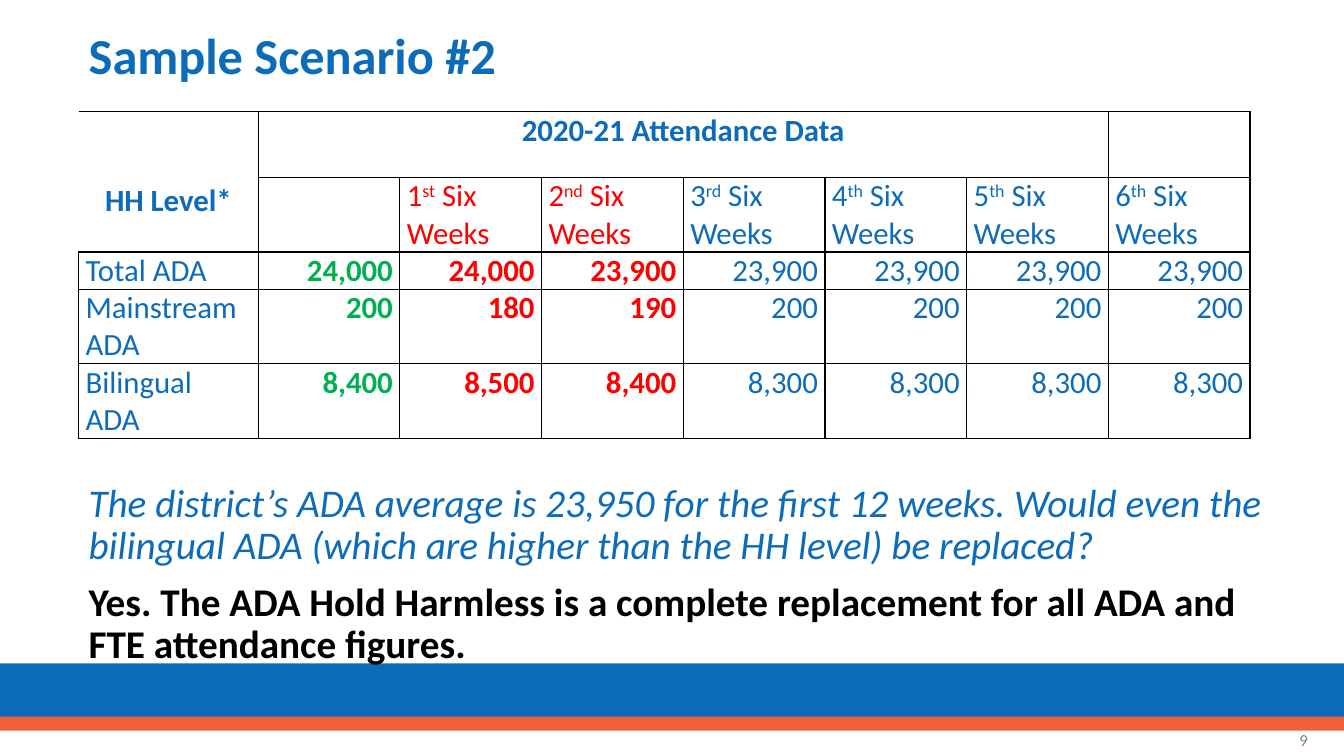
from dataclasses import dataclass

from lxml.etree import SubElement
from pptx import Presentation
from pptx.dml.color import RGBColor
from pptx.enum.shapes import MSO_SHAPE
from pptx.enum.text import MSO_ANCHOR, MSO_AUTO_SIZE, PP_ALIGN
from pptx.oxml.ns import qn
from pptx.util import Inches, Pt

BLUE, ORANGE, RED, GREEN = "0D6CB9", "F16038", "FF0000", "00B050"
BLACK, GREY = "000000", "808080"


@dataclass
class Band:
    top: float
    height: float
    color: str


@dataclass
class AdaRow:
    label: str
    values: list[str]


BANDS = [Band(6.58, 0.58, BLUE), Band(7.11, 0.14, ORANGE)]
ADA_ROWS = [
    AdaRow("Total ADA", ["24,000", "24,000"] + ["23,900"] * 5),
    AdaRow("Mainstream ADA", ["200", "180", "190"] + ["200"] * 4),
    AdaRow("Bilingual ADA", ["8,400", "8,500", "8,400"] + ["8,300"] * 4),
]
VALUE_COLORS = [GREEN, RED, RED] + [BLUE] * 4
ORDINALS = ["st", "nd", "rd", "th", "th", "th"]
ROW_HEIGHTS = [0.65, 0.74, 0.37, 0.74, 0.74]
LABEL_WIDTH, TABLE_WIDTH = 1.78, 11.62


def rgb(color: str) -> RGBColor:
    return RGBColor.from_string(color)


def write(p, text: str, *, size: float = 22, color: str = BLUE, bold: bool = False,
          italic: bool = False, align=PP_ALIGN.LEFT, raised: bool = False) -> None:
    p.alignment = align
    r = p.add_run()
    r.text = text
    r.font.name = "Calibri"
    r.font.size = Pt(size)
    r.font.bold = bold
    r.font.italic = italic
    r.font.color.rgb = rgb(color)
    if raised:
        r.font._element.set("baseline", "30000")


def add_band(s, band: Band) -> None:
    sp = s.shapes.add_shape(MSO_SHAPE.RECTANGLE, 0, Inches(band.top),
                            Inches(13.33), Inches(band.height))
    sp.shadow.inherit = False
    sp.fill.solid()
    sp.fill.fore_color.rgb = rgb(band.color)
    sp.line.fill.background()


def add_text_box(s, left: float, top: float, width: float, height: float):
    sp = s.shapes.add_textbox(Inches(left), Inches(top), Inches(width), Inches(height))
    sp.text_frame.word_wrap = True
    return sp.text_frame


def format_cell(cell, left_border: bool) -> None:
    cell.margin_left = cell.margin_right = Inches(0.07)
    cell.margin_top = cell.margin_bottom = 0
    tc_pr = cell._tc.get_or_add_tcPr()
    for side in "LRTB":
        ln = SubElement(tc_pr, qn(f"a:ln{side}"), w=str(Pt(1)))
        if side == "L" and not left_border:
            SubElement(ln, qn("a:noFill"))
        else:
            fill = SubElement(ln, qn("a:solidFill"))
            SubElement(fill, qn("a:srgbClr"), val=BLACK)
    cell.fill.background()


def add_attendance_table(s) -> None:
    frame = s.shapes.add_table(len(ROW_HEIGHTS), 8, Inches(0.78), Inches(1.11),
                               Inches(TABLE_WIDTH), Inches(sum(ROW_HEIGHTS)))
    table = frame.table
    table.first_row = table.horz_banding = False
    for row, height in zip(table.rows, ROW_HEIGHTS):
        row.height = Inches(height)
    for i, column in enumerate(table.columns):
        column.width = Inches((TABLE_WIDTH - LABEL_WIDTH) / 7 if i else LABEL_WIDTH)
    for i in range(len(ROW_HEIGHTS)):
        for j in range(8):
            format_cell(table.cell(i, j), left_border=j > 0 or i > 1)

    level = table.cell(0, 0)
    level.merge(table.cell(1, 0))
    level.vertical_anchor = MSO_ANCHOR.MIDDLE
    level.margin_top = Inches(0.37)
    write(level.text_frame.paragraphs[0], "HH Level*", bold=True, align=PP_ALIGN.CENTER)
    heading = table.cell(0, 1)
    heading.merge(table.cell(0, 6))
    write(heading.text_frame.paragraphs[0], "2020-21 Attendance Data", bold=True,
          align=PP_ALIGN.CENTER)

    for n, suffix in enumerate(ORDINALS, 1):
        p = table.cell(1, n + 1).text_frame.paragraphs[0]
        color = VALUE_COLORS[n]
        write(p, str(n), color=color)
        write(p, suffix, color=color, raised=True)
        write(p, " Six Weeks", color=color)

    for i, row in enumerate(ADA_ROWS, 2):
        write(table.cell(i, 0).text_frame.paragraphs[0], row.label)
        for j, (value, color) in enumerate(zip(row.values, VALUE_COLORS), 1):
            write(table.cell(i, j).text_frame.paragraphs[0], value, color=color,
                  bold=color != BLUE, align=PP_ALIGN.RIGHT)


def add_title(s) -> None:
    sp = s.shapes.title
    sp.left, sp.top, sp.width, sp.height = map(Inches, (0.78, 0.17, 12.16, 0.82))
    tf = sp.text_frame
    tf.auto_size = MSO_AUTO_SIZE.NONE
    tf.vertical_anchor = MSO_ANCHOR.MIDDLE
    p = tf.paragraphs[0]
    p.line_spacing = 0.9
    write(p, "Sample Scenario #2", size=36, bold=True)


def add_question(s) -> None:
    tf = add_text_box(s, 0.78, 4.75, 11.89, 1.82)
    p = tf.paragraphs[0]
    p.line_spacing = 0.9
    write(p, "The district’s ADA average is 23,950 for the first 12 weeks. Would even "
             "the bilingual ADA (which are higher than the HH level) be replaced?",
          size=28, italic=True)
    p = tf.add_paragraph()
    p.line_spacing = 0.9
    p.space_before = Pt(10)
    write(p, "Yes. The ADA Hold Harmless is a complete replacement for all ADA and "
             "FTE attendance figures.", size=28, color=BLACK, bold=True)


def main() -> None:
    prs = Presentation()
    prs.slide_width, prs.slide_height = Inches(13.33), Inches(7.5)
    s = prs.slides.add_slide(prs.slide_layouts[5])
    for band in BANDS:
        add_band(s, band)
    add_title(s)
    add_question(s)
    add_attendance_table(s)
    tf = add_text_box(s, 10.07, 7.14, 3, 0.4)
    tf.vertical_anchor = MSO_ANCHOR.MIDDLE
    write(tf.paragraphs[0], "9", size=12, color=GREY, align=PP_ALIGN.RIGHT)
    prs.save("out.pptx")


if __name__ == "__main__":
    main()
